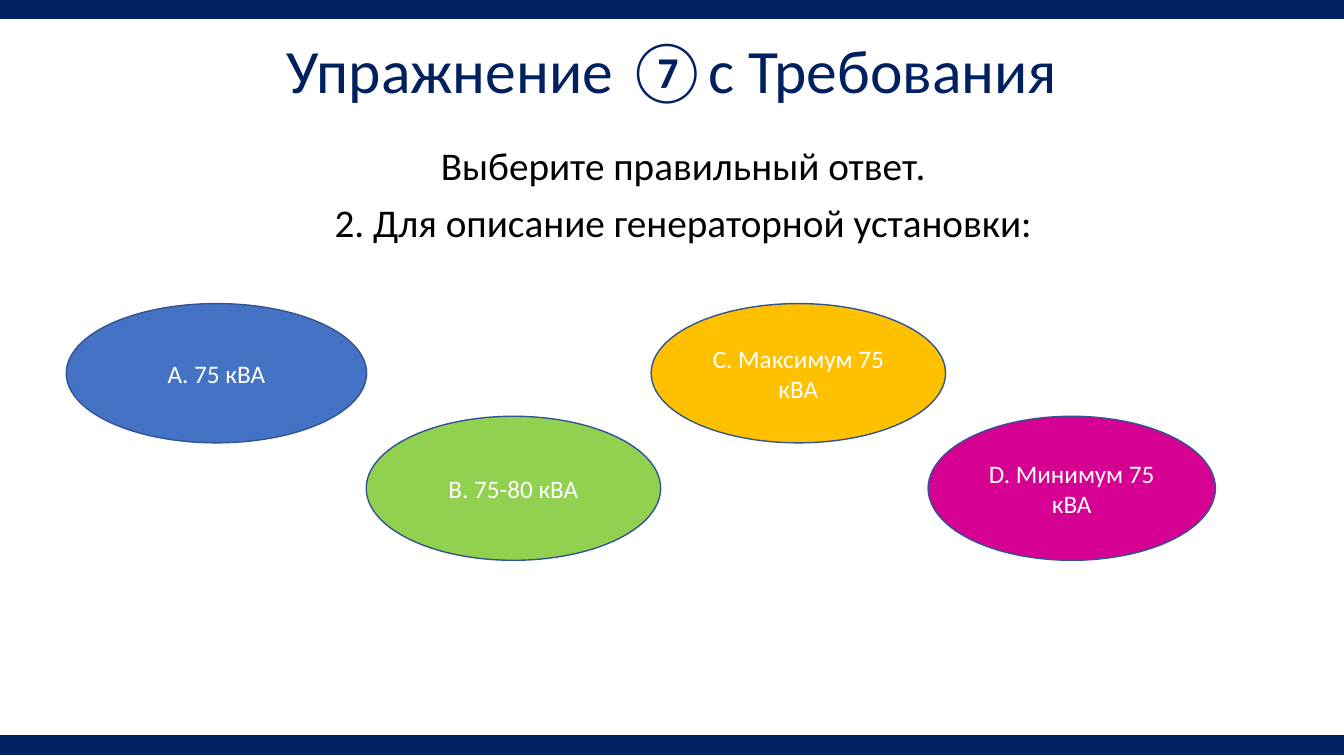
from pptx import Presentation
from pptx.dml.color import RGBColor
from pptx.enum.shapes import MSO_SHAPE
from pptx.enum.text import MSO_ANCHOR, PP_ALIGN
from pptx.util import Cm, Pt

COLORS = {
    "navy": "002060",
    "black": "000000",
    "white": "FFFFFF",
    "outline": "325491",
    "blue": "4472C4",
    "green": "92D050",
    "amber": "FFC000",
    "magenta": "D60093",
}


def add_filled_shape(kind, left, top, width, height, fill, line):
    shape = page.shapes.add_shape(kind, Cm(left), Cm(top), Cm(width), Cm(height))
    shape.shadow.inherit = False
    shape.fill.solid()
    shape.fill.fore_color.rgb = RGBColor.from_string(COLORS[fill])
    shape.line.color.rgb = RGBColor.from_string(COLORS[line])
    shape.line.width = Pt(1)
    return shape


def format_text(frame, size, color, line_spacing=1.0):
    frame.word_wrap = True
    for para in frame.paragraphs:
        para.alignment = PP_ALIGN.CENTER
        para.line_spacing = line_spacing
        for span in para.runs:
            span.font.name = "Calibri"
            span.font.size = Pt(size)
            span.font.color.rgb = RGBColor.from_string(COLORS[color])


deck = Presentation()
deck.slide_width, deck.slide_height = Cm(33.87), Cm(19.05)
page = deck.slides.add_slide(deck.slide_layouts[5])

# Bars along the top and bottom edges
for bar_top in (0, 18.55):
    add_filled_shape(MSO_SHAPE.RECTANGLE, 0, bar_top, 33.87, 0.46, "navy", "navy")

# Title
title = page.shapes.title
title.left, title.top, title.width, title.height = Cm(5.51), Cm(0.76), Cm(22.86), Cm(2.21)
title.text_frame.text = "Упражнение ⑦c Требования"
title.text_frame.vertical_anchor = MSO_ANCHOR.MIDDLE
format_text(title.text_frame, 44, "navy", 0.9)

# Question
question = page.shapes.add_textbox(Cm(6.05), Cm(3.58), Cm(22.33), Cm(3.73))
question.text_frame.text = "Выберите правильный ответ.\n2. Для описание генераторной установки:"
format_text(question.text_frame, 28, "black", 0.9)
question.text_frame.paragraphs[1].space_before = Pt(10)

# Answers, alternating between an upper and a lower row
rows = [(7.65, 3.51), (10.49, 3.63)]
answers = [
    ("A. 75 кВА", 1.67, 7.57, "blue"),
    ("B. 75-80 кВА", 9.23, 7.42, "green"),
    ("C. Максимум 75 кВА", 16.41, 7.42, "amber"),
    ("D. Минимум 75 кВА", 23.39, 7.24, "magenta"),
]
for index, (answer, left, width, fill) in enumerate(answers):
    top, height = rows[index % 2]
    oval = add_filled_shape(MSO_SHAPE.OVAL, left, top, width, height, fill, "outline")
    oval.text_frame.text = answer
    oval.text_frame.vertical_anchor = MSO_ANCHOR.MIDDLE
    format_text(oval.text_frame, 18, "white")

deck.save("out.pptx")
